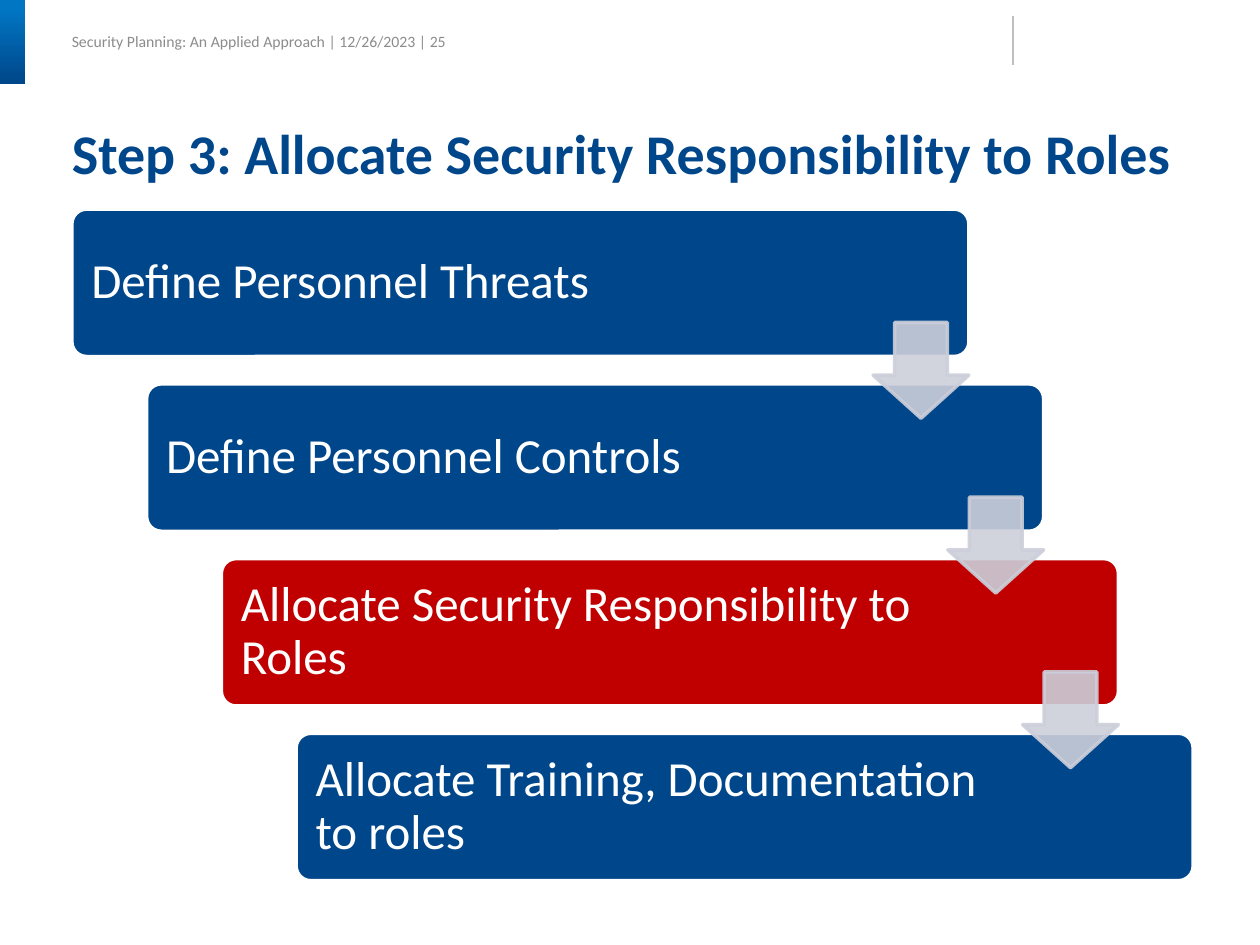
from dataclasses import dataclass

from lxml import etree
from pptx import Presentation
from pptx.dml.color import RGBColor
from pptx.enum.shapes import MSO_CONNECTOR, MSO_SHAPE
from pptx.enum.text import MSO_ANCHOR, MSO_AUTO_SIZE, PP_ALIGN
from pptx.oxml.ns import qn
from pptx.util import Inches, Pt

ROUNDED = MSO_SHAPE.ROUNDED_RECTANGLE
RECTANGLE = MSO_SHAPE.RECTANGLE
DOWN_ARROW = MSO_SHAPE.DOWN_ARROW
STRAIGHT = MSO_CONNECTOR.STRAIGHT
TOP, MIDDLE = MSO_ANCHOR.TOP, MSO_ANCHOR.MIDDLE
LEFT = PP_ALIGN.LEFT
GROW = MSO_AUTO_SIZE.SHAPE_TO_FIT_TEXT


@dataclass(frozen=True)
class Theme:
    font: str = "Calibri"
    navy: RGBColor = RGBColor(0x00, 0x46, 0x8A)
    blue: RGBColor = RGBColor(0x01, 0x76, 0xC3)
    red: RGBColor = RGBColor(0xC0, 0x00, 0x00)
    white: RGBColor = RGBColor(0xFF, 0xFF, 0xFF)
    header: RGBColor = RGBColor(0x8C, 0x8C, 0x8C)
    rule: RGBColor = RGBColor(0xBF, 0xBF, 0xBF)
    arrow: RGBColor = RGBColor(0xCC, 0xCF, 0xDA)
    title_size: int = 32
    step_size: int = 28
    header_size: int = 9


theme = Theme()


def write_text(shape, text, *, size, color, bold=False, anchor=MIDDLE,
               margins=(0, 0, 0, 0), wrap=True, spacing=None):
    """Fill a shape with one formatted paragraph; margins are in inches."""
    frame = shape.text_frame
    frame.word_wrap = wrap
    frame.vertical_anchor = anchor
    (frame.margin_left, frame.margin_top,
     frame.margin_right, frame.margin_bottom) = map(Inches, margins)
    paragraph = frame.paragraphs[0]
    paragraph.text = text
    paragraph.alignment = LEFT
    if spacing:
        paragraph.line_spacing = spacing
    font = paragraph.font
    font.name, font.size, font.bold = theme.font, Pt(size), bold
    font.color.rgb = color


def add_filled_shape(kind, left, top, width, height, fill, line):
    shape = slide.shapes.add_shape(
        kind, Inches(left), Inches(top), Inches(width), Inches(height))
    shape.shadow.inherit = False
    shape.fill.solid()
    shape.fill.fore_color.rgb = fill
    shape.line.color.rgb = line
    shape.line.width = Pt(2)
    return shape


presentation = Presentation()
presentation.slide_width = Inches(10)
presentation.slide_height = Inches(7.5)
slide = presentation.slides.add_slide(presentation.slide_layouts[5])

# Header: text, gradient tab and vertical rule
header = slide.shapes.add_textbox(Inches(0.57), Inches(0.23), Inches(3.2), Inches(0.23))
write_text(header, "Security Planning: An Applied Approach | 12/26/2023 | 25",
           size=theme.header_size, color=theme.header,
           margins=(0, 0, 0.2, 0.04), wrap=False)

tab = add_filled_shape(RECTANGLE, 0, 0, 0.2, 0.67, theme.navy, theme.navy)
tab.line.fill.background()
tab.fill.gradient()
tab.fill.gradient_angle = 270
for stop, color, position in zip(tab.fill.gradient_stops,
                                 (theme.blue, theme.navy), (0.1, 1)):
    stop.color.rgb = color
    stop.position = position

rule = slide.shapes.add_connector(
    STRAIGHT, Inches(8.04), Inches(0.13), Inches(8.04), Inches(0.52))
rule.line.color.rgb = theme.rule
rule.line.width = Pt(0.75)
etree.SubElement(rule._element.spPr, qn("a:effectLst"))

# Title
title = slide.shapes.title
title.left, title.top = Inches(0.57), Inches(1)
title.width, title.height = Inches(8.92), Inches(0.48)
write_text(title, "Step 3: Allocate Security Responsibility to Roles",
           size=theme.title_size, color=theme.navy, bold=True,
           anchor=TOP, spacing=0.9)
title.text_frame.auto_size = GROW

# Staircase of steps, evenly spaced from the first to the last
steps = [
    ("Define Personnel Threats", theme.navy),
    ("Define Personnel Controls", theme.navy),
    ("Allocate Security Responsibility to Roles", theme.red),
    ("Allocate Training, Documentation to roles", theme.navy),
]
gaps = len(steps) - 1
step_x, step_y = 1.78 / gaps, 4.16 / gaps
for index, (text, fill) in enumerate(steps):
    box = add_filled_shape(ROUNDED, 0.57 + index * step_x, 1.66 + index * step_y,
                           7.12, 1.17, fill, theme.white)
    box.adjustments[0] = 0.1
    write_text(box, text, size=theme.step_size, color=theme.white,
               margins=(0.12, 0.12, 1.47, 0.12), spacing=0.9)

# Translucent arrows from each step to the next
for index in range(gaps):
    arrow = add_filled_shape(DOWN_ARROW, 6.93 + index * step_x, 2.56 + index * step_y,
                             0.76, 0.76, theme.arrow, theme.arrow)
    arrow.adjustments[0], arrow.adjustments[1] = 0.55, 0.45
    for color in arrow._element.spPr.iter(qn("a:srgbClr")):
        etree.SubElement(color, qn("a:alpha"), val="90000")

presentation.save("out.pptx")
